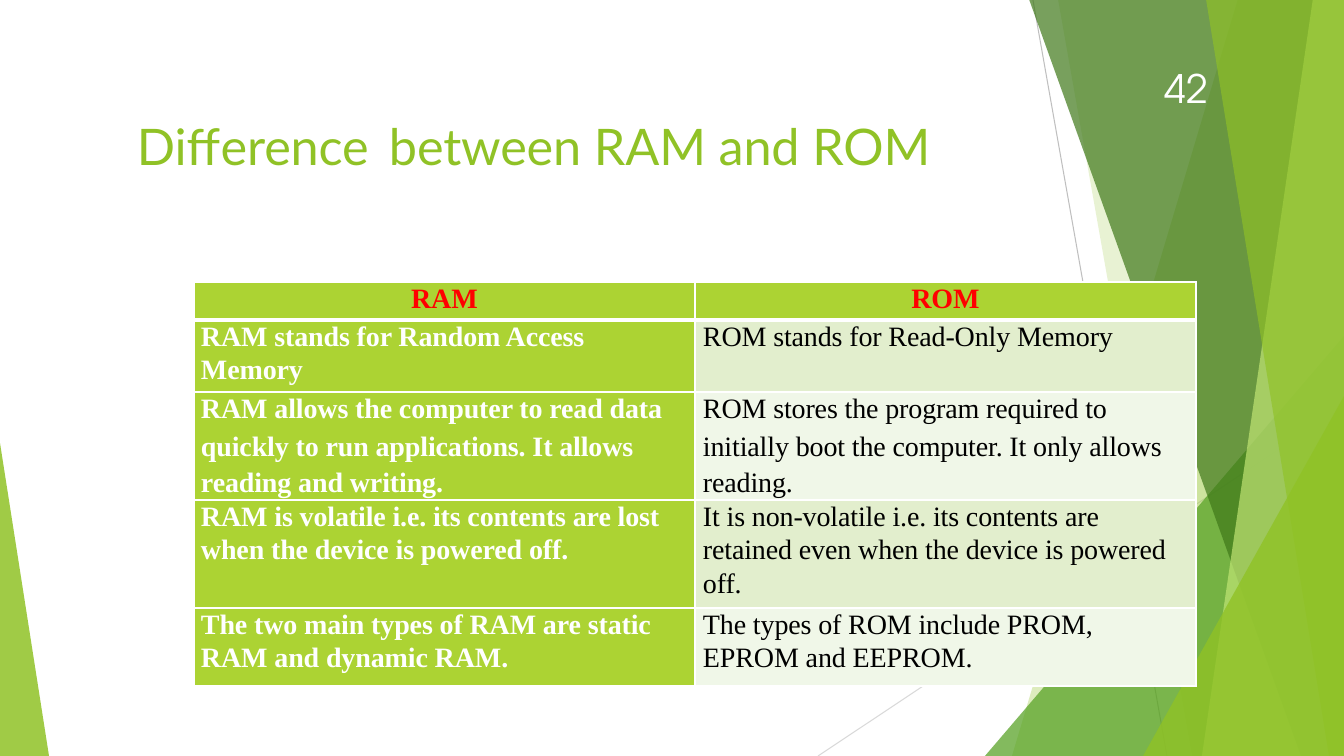
from lxml.etree import SubElement
from pptx import Presentation
from pptx.dml.color import RGBColor
from pptx.enum.shapes import MSO_CONNECTOR, MSO_SHAPE
from pptx.enum.text import PP_ALIGN
from pptx.oxml.ns import qn
from pptx.util import Pt

PX = 914400 / 100.8
WIDTH, HEIGHT = 1344, 756
GREEN, LIME, WHITE = "90C226", "ACD333", "FFFFFF"
PALE, PALER = "E2EECD", "F0F7E8"


def paint(fill, color):
    fill.solid()
    fill.fore_color.rgb = RGBColor.from_string(color)


def write_text(frame, text, font="Times New Roman", size=20, color="000000", bold=False,
               spacing=-10, indent=0, align=PP_ALIGN.LEFT, before=(0,), leading=(None,), top=0):
    frame.word_wrap = True
    frame.margin_left = frame.margin_right = frame.margin_bottom = 0
    frame.margin_top = round(top * PX)
    for index, line in enumerate(text.split("\n")):
        para = frame.paragraphs[0] if index == 0 else frame.add_paragraph()
        para.alignment = align
        para.space_before = Pt(before[min(index, len(before) - 1)])
        exact = leading[min(index, len(leading) - 1)]
        if exact:
            para.line_spacing = Pt(exact)
        properties = para._p.get_or_add_pPr()
        properties.set("marL", str(round(indent * PX)))
        properties.set("indent", "0")
        span = para.add_run()
        span.text = line
        span.font.name = font
        span.font.size = Pt(size)
        span.font.bold = bold
        paint(span.font.fill, color)
        span.font._element.set("spc", str(spacing))


deck = Presentation()
deck.slide_width = round(WIDTH * PX)
deck.slide_height = round(HEIGHT * PX)
page = deck.slides.add_slide(deck.slide_layouts[6])
paint(page.background.fill, WHITE)

for start_x, start_y, end_x, end_y, color in [
    (1033, 0, 1167, HEIGHT, "BFBFBF"),
    (WIDTH, 406, 818, HEIGHT, "D9D9D9"),
]:
    line = page.shapes.add_connector(
        MSO_CONNECTOR.STRAIGHT, *(round(value * PX) for value in (start_x, start_y, end_x, end_y)))
    paint(line.line.fill, color)
    line.line.width = Pt(0.75)
    SubElement(line._element.spPr, qn("a:effectLst"))

facets = [
    ("band", (1238, 1012), GREEN, 30),
    ("band", (1058, 1192), GREEN, 20),
    ("triangle", (985, 336, 359, 420, 1), "54A021", 72),
    ("band", (1029, 1301), "3F7819", 70),
    ("band", (1313, 1202), "C0E474", 70),
    ("band", (1206, 1329), GREEN, 65),
    ("triangle", (1143, 396, 201, 360, 1), GREEN, 80),
    ("triangle", (0, 443, 49, 313, 0), GREEN, 85),
]
for kind, geometry, color, opacity in facets:
    if kind == "band":
        top_x, bottom_x = geometry
        outline = page.shapes.build_freeform(top_x, -1, scale=PX)
        outline.add_line_segments([(WIDTH, -1), (WIDTH, HEIGHT), (bottom_x, HEIGHT)], close=True)
        facet = outline.convert_to_shape()
    else:
        *bounds, apex = geometry
        facet = page.shapes.add_shape(
            MSO_SHAPE.ISOSCELES_TRIANGLE, *(round(value * PX) for value in bounds))
        facet.adjustments[0] = apex
    facet.shadow.inherit = False
    facet.line.fill.background()
    paint(facet.fill, color)
    tint = facet._element.spPr.find(qn("a:solidFill")).find(qn("a:srgbClr"))
    SubElement(tint, qn("a:alpha")).set("val", str(opacity * 1000))

title = page.shapes.add_textbox(*(round(value * PX) for value in (136, 114, 852, 64)))
write_text(title.text_frame, "Difference\tbetween RAM and ROM", font="Lato", size=36,
           color=GREEN, indent=1, before=(1,), top=1)
tabs = SubElement(title.text_frame.paragraphs[0]._p.get_or_add_pPr(), qn("a:tabLst"))
SubElement(tabs, qn("a:tab"), pos=str(round(266 * PX)), algn="l")

number = page.shapes.add_textbox(*(round(value * PX) for value in (1164, 62, 46, 50)))
write_text(number.text_frame, "42", font="TeX Gyre Adventor", size=28, color=WHITE,
           spacing=10, indent=1, before=(1.1,), top=2)

rows = [
    (38, "RAM", "ROM"),
    (72, "RAM stands for Random Access\nMemory", "ROM stands for Read-Only Memory"),
    (108, "RAM allows the computer to read data\n"
          "quickly to run applications. It allows  reading and writing.",
     "ROM stores the program required to\n"
     "initially boot the computer. It only allows  reading."),
    (108, "RAM is volatile i.e. its contents are lost\nwhen the device is powered off.",
     "It is non-volatile i.e. its contents are\nretained even when the device is powered\noff."),
    (78, "The two main types of RAM are static\nRAM and dynamic RAM.",
     "The types of ROM include PROM,\nEPROM and EEPROM."),
]
bounds = (194, 282, 1002, sum(row[0] for row in rows))
table = page.shapes.add_table(len(rows), 2, *(round(value * PX) for value in bounds)).table
table.first_row = table.horz_banding = False
for column in table.columns:
    column.width = round(501 * PX)

for row_index, (height, *texts) in enumerate(rows):
    table.rows[row_index].height = round(height * PX)
    header = row_index == 0
    for column_index, text in enumerate(texts):
        cell = table.cell(row_index, column_index)
        cell.margin_left = cell.margin_right = cell.margin_top = cell.margin_bottom = 0
        label = header or column_index == 0
        if header:
            style = {"color": "FF0000", "align": PP_ALIGN.CENTER}
        else:
            style = {"color": WHITE if label else "000000", "indent": 7 + column_index}
        if row_index == 2:
            style.update(leading=(23.4, 25.7), before=(0, 1.1))
        else:
            style.update(leading=(23.3, None), before=(0, 1.6))
        write_text(cell.text_frame, text, bold=label, **style)
        for side in "LRTB":
            thick = (side == "B" and header) or (side == "T" and row_index == 1)
            border = SubElement(cell._tc.get_or_add_tcPr(), qn("a:ln" + side),
                                w=str(Pt(3 if thick else 1)))
            SubElement(SubElement(border, qn("a:solidFill")), qn("a:srgbClr"), val=WHITE)
        paint(cell.fill, LIME if label else PALE if row_index % 2 else PALER)

deck.save("out.pptx")
